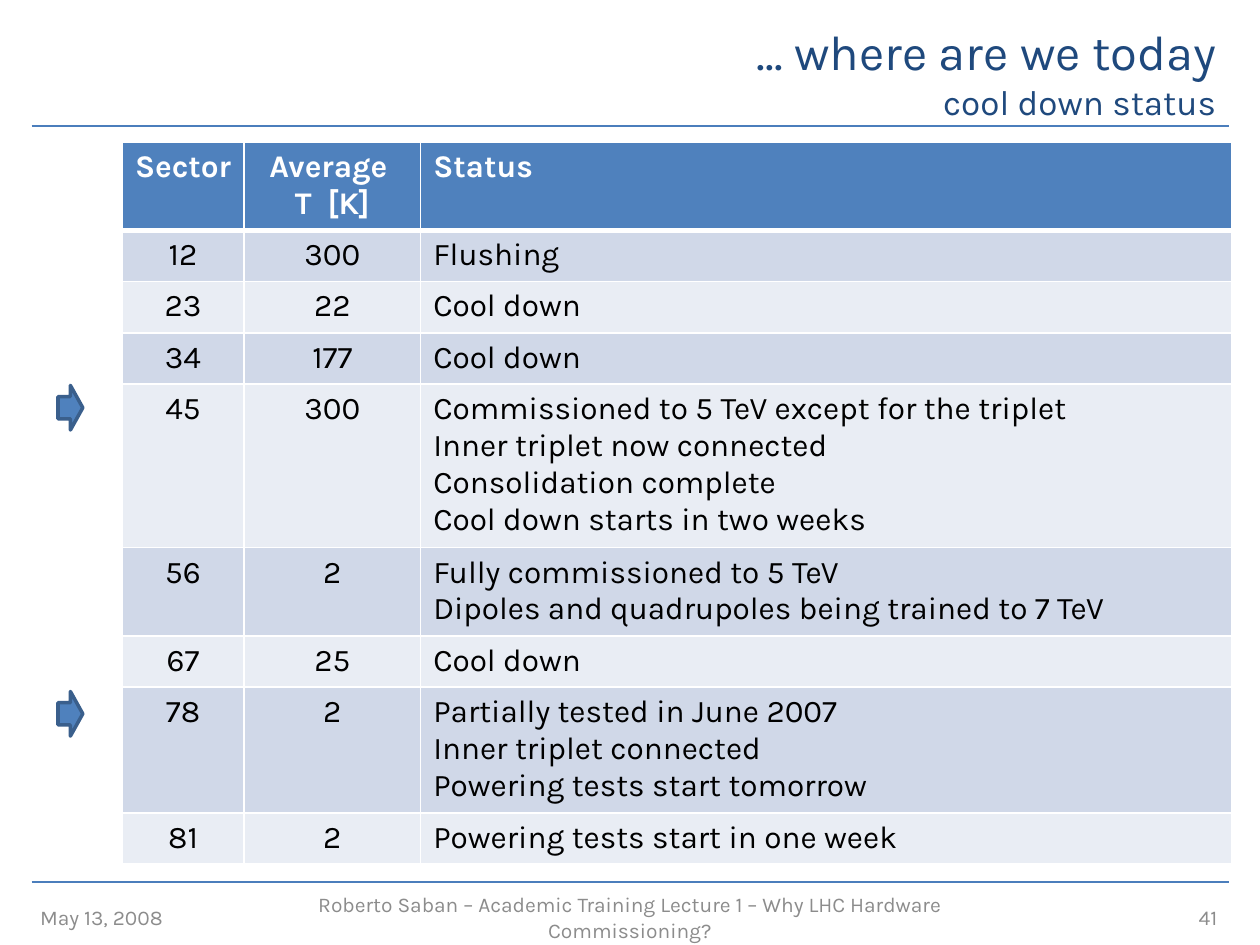
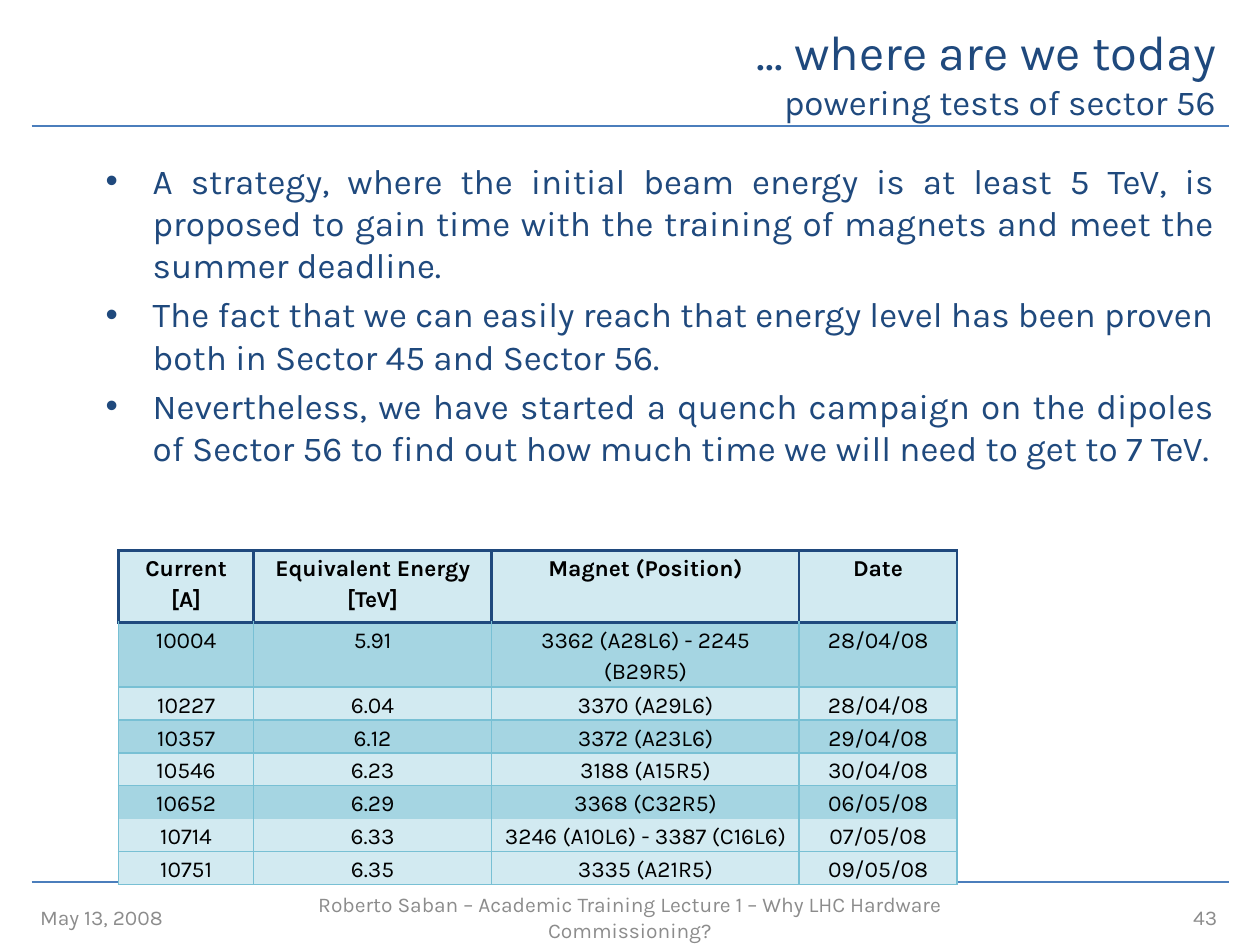
from lxml import etree
from pptx import Presentation
from pptx.dml.color import RGBColor
from pptx.enum import shapes, text
from pptx.oxml.ns import qn
from pptx.util import Cm, Pt

FONT = "Karla"
NAVY = RGBColor(0x1F, 0x49, 0x7D)
BLUE = RGBColor(0x4F, 0x81, 0xBD)
RULE_BLUE = RGBColor(0x4B, 0x7E, 0xBC)
ARROW_EDGE = RGBColor(0x3A, 0x5F, 0x8C)
GREY = RGBColor(0x8C, 0x8C, 0x8C)
BLACK = RGBColor(0, 0, 0)
WHITE = RGBColor(0xFF, 0xFF, 0xFF)
BAND_DARK = RGBColor(0xD0, 0xD8, 0xE8)
BAND_LIGHT = RGBColor(0xE9, 0xED, 0xF4)
AQUA_DARK = RGBColor(0xA5, 0xD5, 0xE2)
AQUA_LIGHT = RGBColor(0xD2, 0xEA, 0xF1)
AQUA_LINE = RGBColor(0x78, 0xC0, 0xD4)

LEFT, CENTER, RIGHT, JUSTIFY = (
    text.PP_ALIGN.LEFT, text.PP_ALIGN.CENTER, text.PP_ALIGN.RIGHT, text.PP_ALIGN.JUSTIFY)

DATE = "May 13, 2008"
LECTURE = "Roberto Saban – Academic Training Lecture 1 – Why LHC Hardware Commissioning?"
TITLE = "... where are we today"

STATUS_HEAD = ("Sector", "Average \nT  [K]", "Status")
SECTORS = [
    ("12", "300", "Flushing"),
    ("23", "22", "Cool down"),
    ("34", "177", "Cool down"),
    ("45", "300", "Commissioned to 5 TeV except for the triplet\nInner triplet now connected\n"
                  "Consolidation complete\nCool down starts in two weeks"),
    ("56", "2", "Fully commissioned to 5 TeV\nDipoles and quadrupoles being trained to 7 TeV"),
    ("67", "25", "Cool down"),
    ("78", "2", "Partially tested in June 2007\nInner triplet connected\n"
                "Powering tests start tomorrow"),
    ("81", "2", "Powering tests start in one week"),
]

STRATEGY = [
    "A strategy, where the initial beam energy is at least 5 TeV, is proposed to gain time "
    "with the training of magnets and meet the summer deadline.",
    "The fact that we can easily reach that energy level has been proven both in Sector 45 "
    "and Sector 56.",
    "Nevertheless, we have started a quench campaign on the dipoles of Sector 56 to find out "
    "how much time we will need to get to 7 TeV.",
]

QUENCH_HEAD = ("Current\n[A]", "Equivalent Energy [TeV]", "Magnet (Position)", "Date")
QUENCHES = [
    ("10004", "5.91", "3362 (A28L6) - 2245 (B29R5)", "28/04/08"),
    ("10227", "6.04", "3370 (A29L6)", "28/04/08"),
    ("10357", "6.12", "3372 (A23L6)", "29/04/08"),
    ("10546", "6.23", "3188 (A15R5)", "30/04/08"),
    ("10652", "6.29", "3368 (C32R5)", "06/05/08"),
    ("10714", "6.33", "3246 (A10L6) - 3387 (C16L6)", "07/05/08"),
    ("10751", "6.35", "3335 (A21R5)", "09/05/08"),
]


def set_font(font, size, color, bold=False):
    font.name, font.size, font.bold = FONT, Pt(size), bold
    font.color.rgb = color


def add_text_box(s, box, anchor=text.MSO_ANCHOR.MIDDLE):
    tf = s.shapes.add_textbox(*map(Cm, box)).text_frame
    tf.word_wrap = True
    tf.vertical_anchor = anchor
    return tf


def add_rule(s, y):
    line = s.shapes.add_connector(shapes.MSO_CONNECTOR.STRAIGHT, Cm(0.64), Cm(y), Cm(24.77), Cm(y))
    line.line.color.rgb = RULE_BLUE
    line.line.width = Pt(1.5)
    etree.SubElement(line._element.spPr, qn("a:effectLst"))


def add_title(s, box, subtitle):
    p = add_text_box(s, box).paragraphs[0]
    p.alignment = RIGHT
    for words, size in ((TITLE, 28), (subtitle, 20)):
        if p.runs:
            p.add_line_break()
        r = p.add_run()
        r.text = words
        set_font(r.font, size, NAVY)


def add_footer(s, top, number):
    for words, left, width, align in ((DATE, 0.56, 3.33, LEFT),
                                      (LECTURE, 4.65, 16.1, CENTER),
                                      (number, 23.42, 1.37, RIGHT)):
        p = add_text_box(s, (left, top, width, 0.56)).paragraphs[0]
        p.text = words
        p.alignment = align
        set_font(p.font, 12, GREY)


def add_base_slide(prs, subtitle, number):
    s = prs.slides.add_slide(prs.slide_layouts[6])
    add_rule(s, 2.54)
    add_rule(s, 17.78)
    add_title(s, (4.45, 0.35, 20.32, 2.2), subtitle)
    add_footer(s, 18.21, str(number))
    return s


def add_grid(s, left, top, widths, heights):
    """Add a table without banding, with the given column widths and row heights."""
    table = s.shapes.add_table(len(heights), len(widths), Cm(left), Cm(top),
                               Cm(sum(widths)), Cm(sum(heights))).table
    table.horz_banding = False
    for column, width in zip(table.columns, widths):
        column.width = Cm(width)
    for row, height in zip(table.rows, heights):
        row.height = Cm(height)
    return table


def set_borders(cell, side, top, bottom):
    """Each edge is a (colour, points) pair, or None for no line."""
    tc_pr = cell._tc.get_or_add_tcPr()
    for tag, edge in (("lnL", side), ("lnR", side), ("lnT", top), ("lnB", bottom)):
        ln = etree.SubElement(tc_pr, qn("a:" + tag))
        if edge is None:
            etree.SubElement(ln, qn("a:noFill"))
            continue
        color, points = edge
        ln.set("w", str(Pt(points)))
        fill = etree.SubElement(ln, qn("a:solidFill"))
        etree.SubElement(fill, qn("a:srgbClr")).set("val", str(color))


def fill_cell(cell, words, fill, align, size, color, bold, spacing=None):
    cell.fill.solid()
    cell.fill.fore_color.rgb = fill
    cell.text_frame.text = words
    for p in cell.text_frame.paragraphs:
        p.alignment = align
        if spacing:
            p.line_spacing = spacing
        set_font(p.font, size, color, bold)


def add_status_table(s, left, top):
    rows = [STATUS_HEAD] + SECTORS
    line_counts = [1 + max(words.count("\n") for words in row) for row in rows]
    heights = [max(1.03, 0.26 + 0.74 * n) for n in line_counts]
    table = add_grid(s, left, top, (2.46, 3.56, 16.36), heights)
    thin, thick = (WHITE, 1), (WHITE, 3)
    for i, row in enumerate(rows):
        head = i == 0
        fill = BLUE if head else (BAND_LIGHT, BAND_DARK)[i % 2]
        for j, words in enumerate(row):
            cell = table.cell(i, j)
            set_borders(cell, thin, thick if i == 1 else thin, thick if head else thin)
            fill_cell(cell, words, fill, LEFT if j == 2 else CENTER, 18,
                      WHITE if head else BLACK, head)


def add_arrow(s, left, top):
    sp = s.shapes.add_shape(shapes.MSO_SHAPE.RIGHT_ARROW, Cm(left), Cm(top), Cm(0.5), Cm(0.9))
    sp.shadow.inherit = False
    sp.fill.solid()
    sp.fill.fore_color.rgb = BLUE
    sp.line.color.rgb = ARROW_EDGE
    sp.line.width = Pt(2)


def add_bullets(s, box, items):
    tf = add_text_box(s, box, text.MSO_ANCHOR.TOP)
    for i, item in enumerate(items):
        p = tf.add_paragraph() if i else tf.paragraphs[0]
        p.text = item
        p.alignment = JUSTIFY
        if i:
            p.space_before = Pt(4)
        p_pr = p._p.get_or_add_pPr()
        p_pr.set("marL", str(Cm(0.95)))
        p_pr.set("indent", str(-Cm(0.95)))
        etree.SubElement(p_pr, qn("a:buFont")).set("typeface", "Arial")
        etree.SubElement(p_pr, qn("a:buChar")).set("char", "•")
        set_font(p.font, 20, NAVY)


def add_quench_table(s, left, top):
    rows = [QUENCH_HEAD] + QUENCHES
    heights = [1.45, 1.27] + [0.64] * (len(rows) - 2)
    table = add_grid(s, left, top, (2.72, 4.8, 6.2, 3.18), heights)
    navy, aqua = (NAVY, 1.5), (AQUA_LINE, 1)
    edges = [navy, navy] + [aqua] * (len(rows) - 1)
    edges[6] = None
    for i, row in enumerate(rows):
        head = i == 0
        fill = AQUA_DARK if i in (1, 3, 5) else AQUA_LIGHT
        for j, words in enumerate(row):
            cell = table.cell(i, j)
            cell.margin_left = cell.margin_right = Cm(0.18)
            cell.margin_top, cell.margin_bottom = Cm(0.03), 0
            set_borders(cell, navy if head else aqua, edges[i], edges[i + 1])
            fill_cell(cell, words, fill, CENTER, 13, BLACK, head, 1.15)


def build_cool_down_slide(prs):
    s = add_base_slide(prs, "cool down status", 41)
    add_status_table(s, 2.46, 2.87)
    for top in (7.77, 13.94):
        add_arrow(s, 1.17, top)


def build_powering_slide(prs):
    s = add_base_slide(prs, "powering tests of sector 56", 43)
    add_bullets(s, (1.88, 3.1, 22.86, 7.6), STRATEGY)
    add_quench_table(s, 2.39, 11.1)


def main():
    prs = Presentation()
    prs.slide_width, prs.slide_height = Cm(25.4), Cm(19.05)
    build_cool_down_slide(prs)
    build_powering_slide(prs)
    prs.save("out.pptx")


if __name__ == "__main__":
    main()
